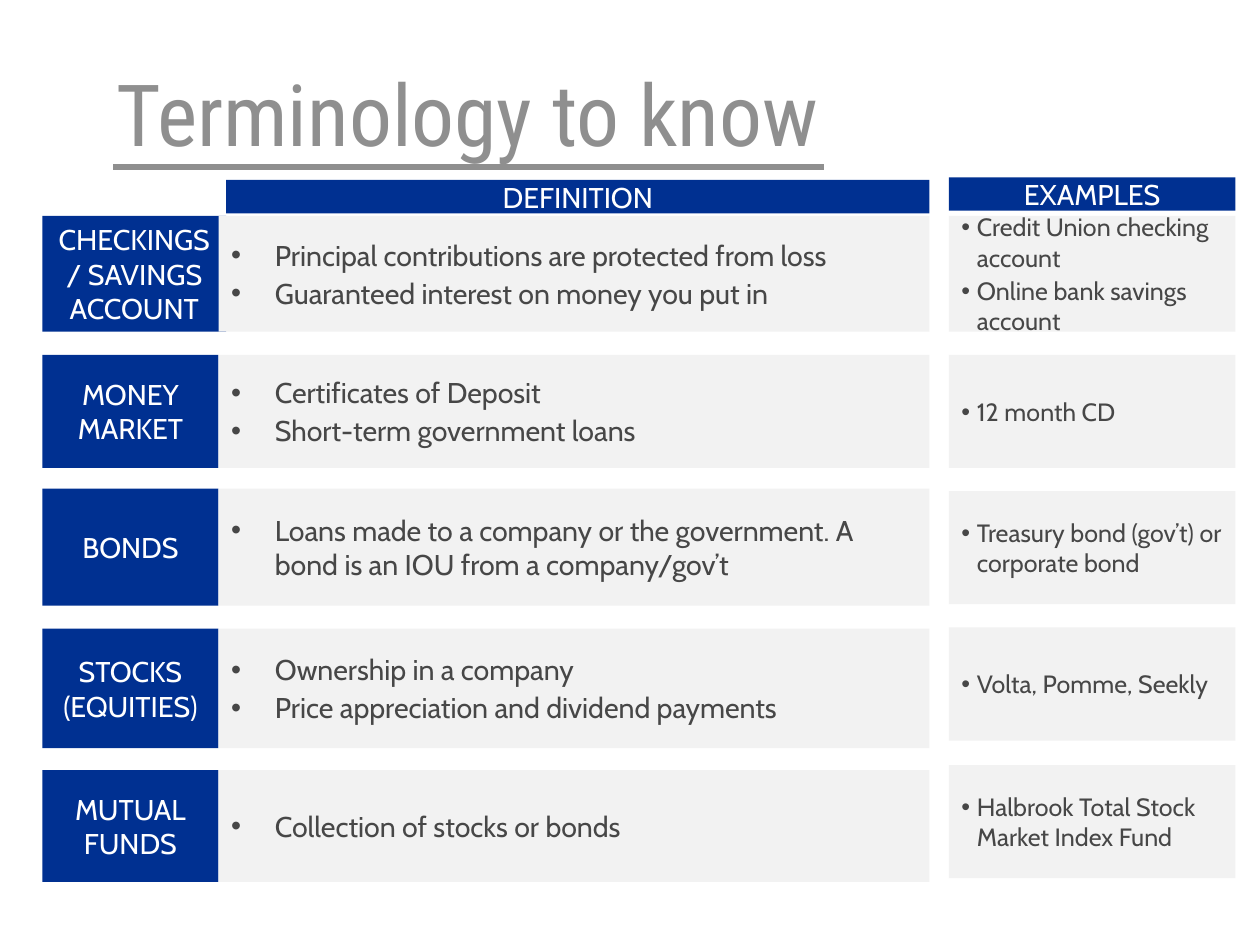
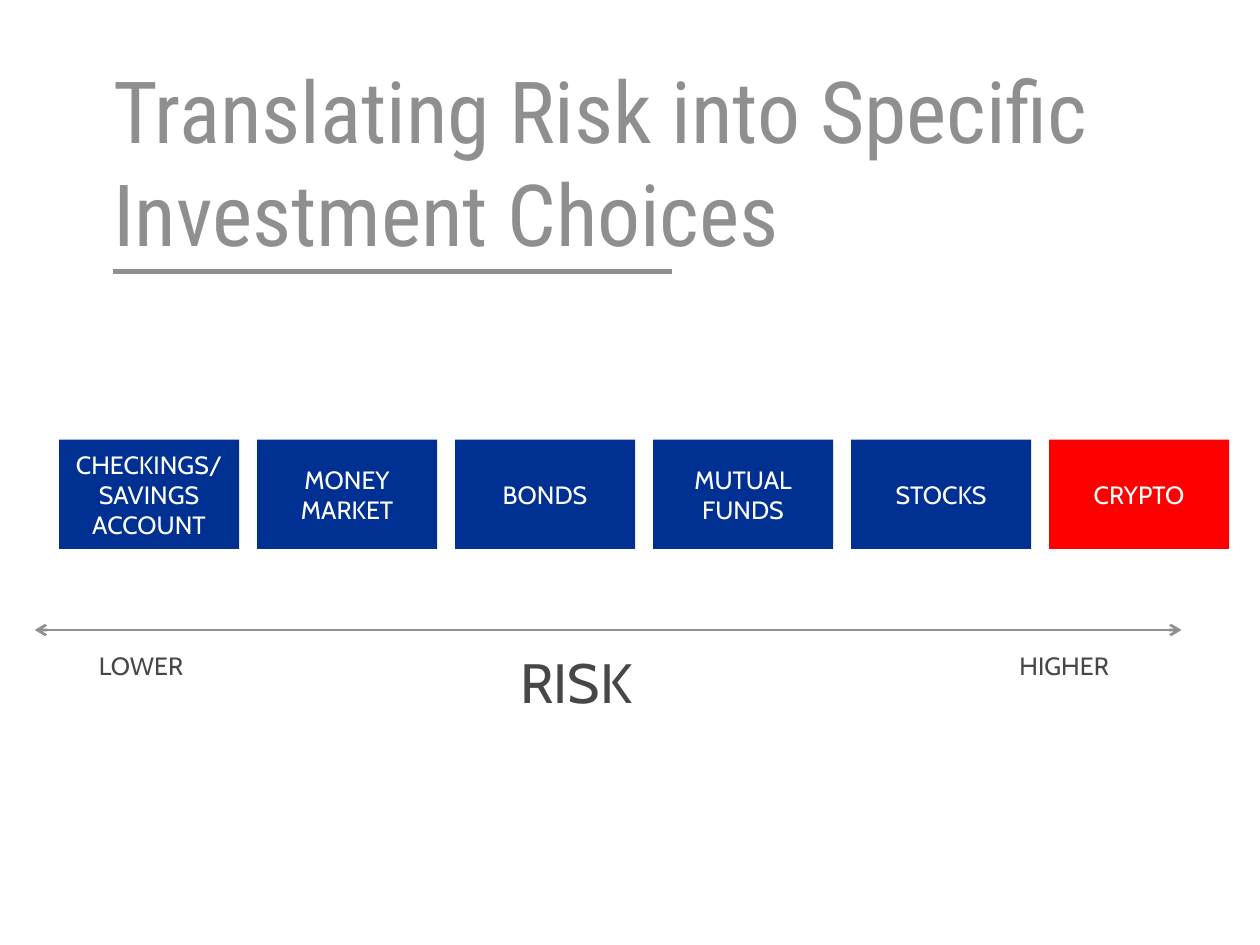
from pptx import Presentation
from pptx.dml.color import RGBColor
from pptx.enum.shapes import MSO_CONNECTOR, MSO_SHAPE
from pptx.enum.text import MSO_ANCHOR, PP_ALIGN
from pptx.oxml.ns import qn
from pptx.util import Inches, Pt
from lxml.etree import SubElement

COLORS = {
    "blue": "003091",
    "panel": "F2F2F2",
    "red": "FF0000",
    "gray": "8F8F8F",
    "text": "474747",
    "white": "FFFFFF",
}
TITLE = dict(font="Roboto Condensed", size=48, color="gray", inset=0, after=0)
HEADING = dict(fill="blue", color="white", align=PP_ALIGN.CENTER)


def add_text(page, text, left, top, width, height, *, fill=None, font="Cabin", size=16,
             color="text", align=PP_ALIGN.LEFT, inset=0.1, after=2, hanging=None):
    """Add text, one paragraph a line, on a filled rectangle or, without a fill, in a text box.

    A hanging indent in inches turns the paragraphs into bullets.
    """
    place = [Inches(length) for length in (left, top, width, height)]
    if fill:
        box = page.shapes.add_shape(MSO_SHAPE.RECTANGLE, *place)
        box.shadow.inherit = False
        box.fill.solid()
        box.fill.fore_color.rgb = RGBColor.from_string(COLORS[fill])
        box.line.fill.background()
    else:
        box = page.shapes.add_textbox(*place)
    frame = box.text_frame
    frame.word_wrap = True
    frame.vertical_anchor = MSO_ANCHOR.MIDDLE if fill else MSO_ANCHOR.TOP
    frame.margin_left = frame.margin_right = Inches(inset)
    frame.margin_top = frame.margin_bottom = Inches(inset / 2)
    frame.text = text
    for paragraph in frame.paragraphs:
        paragraph.alignment = align
        paragraph.space_after = Pt(after)
        if hanging:
            properties = paragraph._p.get_or_add_pPr()
            properties.set("marL", str(Inches(hanging)))
            properties.set("indent", str(-Inches(hanging)))
            SubElement(properties, qn("a:buFont"), typeface="Arial")
            SubElement(properties, qn("a:buChar"), char="•")
        paragraph.font.name = font
        paragraph.font.size = Pt(size)
        paragraph.font.color.rgb = RGBColor.from_string(COLORS[color])


def add_rule(page, left, right, top, weight, arrows=False):
    rule = page.shapes.add_connector(
        MSO_CONNECTOR.STRAIGHT, Inches(left), Inches(top), Inches(right), Inches(top))
    rule.line.color.rgb = RGBColor.from_string(COLORS["gray"])
    rule.line.width = Pt(weight)
    if arrows:
        for end in ("a:headEnd", "a:tailEnd"):
            SubElement(rule.line._get_or_add_ln(), qn(end), type="arrow")
    SubElement(rule._element.spPr, qn("a:effectLst"))


deck = Presentation()
deck.slide_width, deck.slide_height = Inches(9.8), Inches(7.35)
blank = deck.slide_layouts[6]

# Terminology
page = deck.slides.add_slide(blank)
add_text(page, "Terminology to know", 0.91, 0.47, 8.7, 0.81, **TITLE)
add_rule(page, 0.88, 6.41, 1.3, 3)

example_left, example_width = 7.38, 2.23
add_text(page, "DEFINITION", 1.76, 1.4, 5.47, 0.26, **HEADING)
add_text(page, "EXAMPLES", example_left, 1.38, example_width, 0.26, **HEADING)

# term, term width, top, height, definition, example top, example height, examples
terms = [
    ("CHECKINGS/ SAVINGS ACCOUNT", 1.43, 1.68, 0.9,
     "Principal contributions are protected from loss\nGuaranteed interest on money you put in",
     1.68, 0.9, "Credit Union checking account\nOnline bank savings account"),
    ("MONEY MARKET", 1.37, 2.76, 0.88,
     "Certificates of Deposit\nShort-term government loans",
     2.76, 0.88, "12 month CD"),
    ("BONDS", 1.37, 3.8, 0.91,
     "Loans made to a company or the government. A bond is an IOU from a company/gov’t",
     3.82, 0.88, "Treasury bond (gov’t) or corporate bond"),
    ("STOCKS (EQUITIES)", 1.37, 4.89, 0.93,
     "Ownership in a company\nPrice appreciation and dividend payments",
     4.88, 0.88, "Volta, Pomme, Seekly"),
    ("MUTUAL FUNDS", 1.37, 5.99, 0.87,
     "Collection of stocks or bonds",
     5.95, 0.88, "Halbrook Total Stock Market Index Fund"),
]
for term, term_width, top, height, definition, example_top, example_height, examples in terms:
    add_text(page, term, 0.33, top, term_width, height, **HEADING)
    add_text(page, definition, 1.7, top, 5.53, height, fill="panel", hanging=0.34)
    add_text(page, examples, example_left, example_top, example_width, example_height,
             fill="panel", size=14, hanging=0.12)

# Risk scale
page = deck.slides.add_slide(blank)
add_text(page, "Translating Risk into Specific Investment Choices", 0.88, 0.45, 8.68, 1.62, **TITLE)
add_rule(page, 0.88, 5.23, 2.11, 3)

choices = ["CHECKINGS/ SAVINGS ACCOUNT", "MONEY MARKET", "BONDS", "MUTUAL FUNDS", "STOCKS", "CRYPTO"]
choice_width, gap = 1.4, 0.14
for index, choice in enumerate(choices):
    style = HEADING | {"fill": "red" if choice == "CRYPTO" else "blue"}
    add_text(page, choice, 0.46 + index * (choice_width + gap), 3.42, choice_width, 0.85,
             size=14, **style)

add_rule(page, 0.27, 9.19, 4.9, 1.5, arrows=True)
for label, left, top, size in [("LOWER", 0.67, 5.01, 14), ("RISK", 3.95, 4.99, 31),
                               ("HIGHER", 7.83, 5.01, 14)]:
    add_text(page, label, left, top, 1.48, 0.44, size=size)

deck.save("out.pptx")
